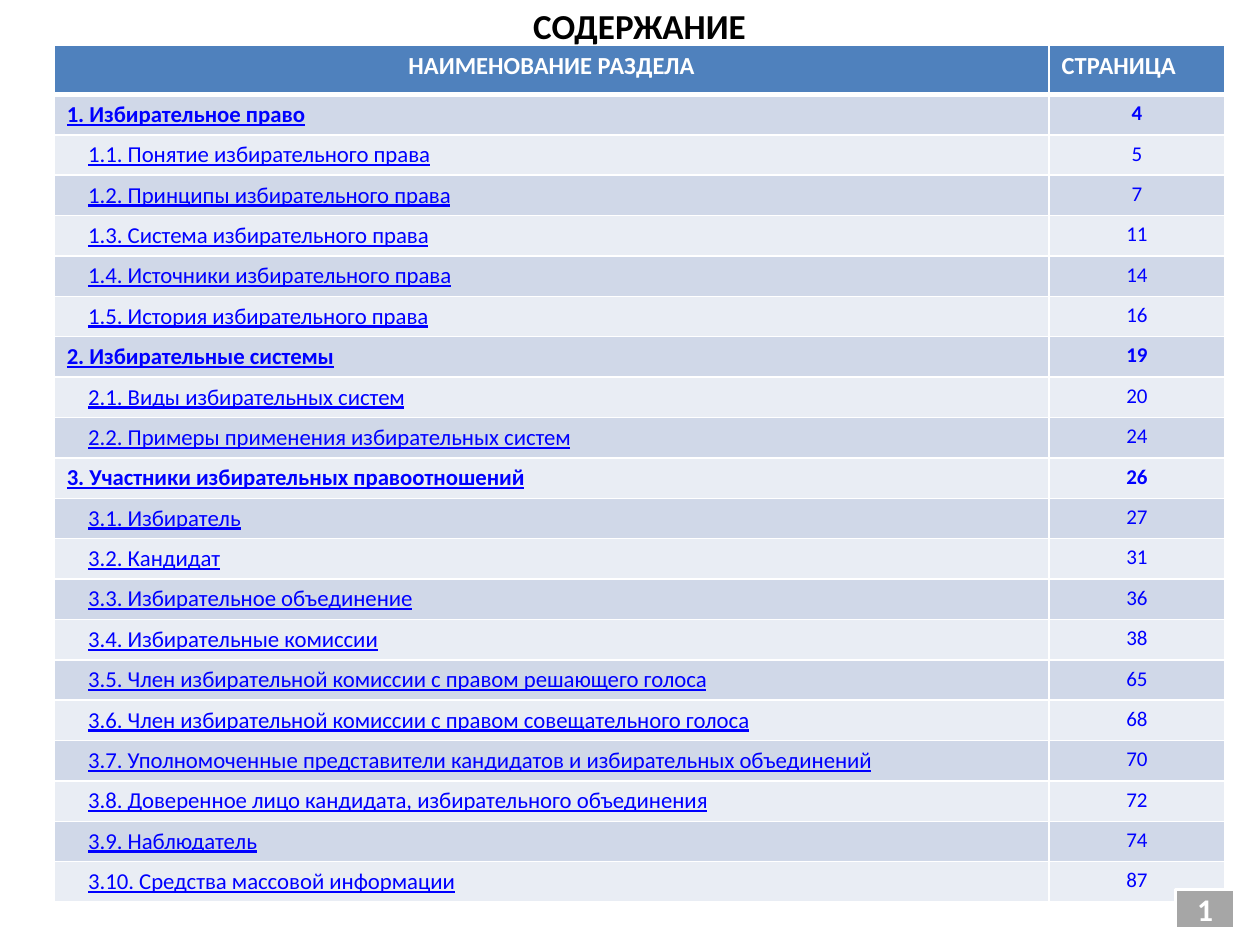
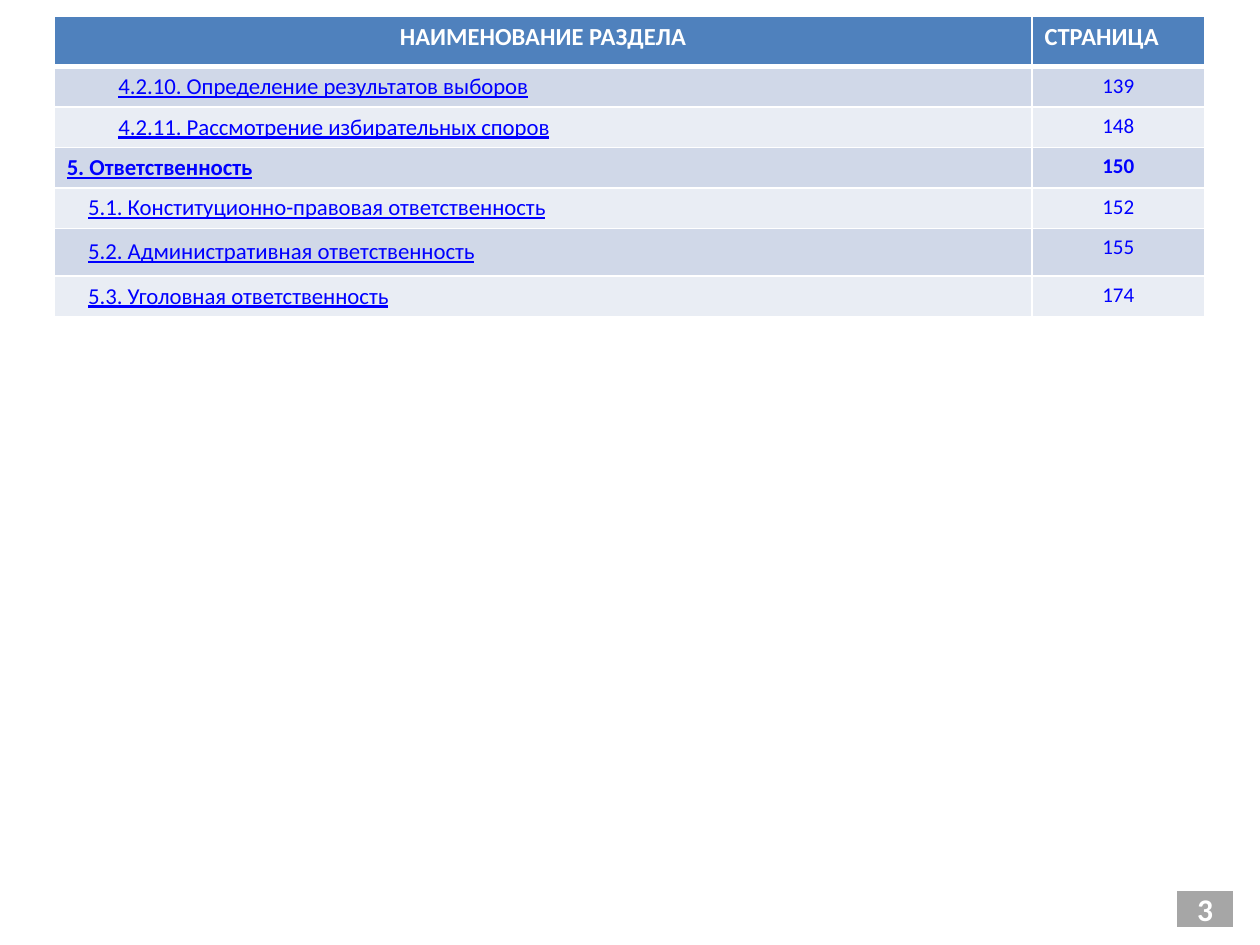
import dataclasses

import pptx
import pptx.dml.color
import pptx.enum.shapes
import pptx.enum.text
import pptx.oxml.ns
import pptx.util
from lxml import etree

Inches = pptx.util.Inches
Pt = pptx.util.Pt
Align = pptx.enum.text.PP_ALIGN
Anchor = pptx.enum.text.MSO_ANCHOR


@dataclasses.dataclass(frozen=True)
class Theme:
    """Colours, type sizes and measures shared by the slides."""
    font: str = "Calibri"
    black: str = "000000"
    white: str = "FFFFFF"
    header: str = "4F81BD"
    bands: tuple = ("D0D8E8", "E9EDF4")
    link: str = "0000FF"
    badge: str = "A6A6A6"
    title_size: float = 20
    badge_size: float = 18
    header_size: float = 14
    section_size: float = 13
    number_size: float = 12
    rule: float = 1
    header_rule: float = 3
    cell_margin: float = 0.1
    indents: tuple = (0, 0.17, 0.41)
    row_height: float = 0.32
    name_share: float = 0.85


THEME = Theme()
WIDTH, HEIGHT = 10, 7.5
LEFT = 0.43
TITLE_BOX = (LEFT, 0.05, 9.29, 0.31)
BADGE_BOX = (9.33, 7.06, 0.47, 0.31)
HEADINGS = ("НАИМЕНОВАНИЕ РАЗДЕЛА", "СТРАНИЦА")

FIRST_SECTIONS = (
    ("1. Избирательное право", 4),
    ("1.1. Понятие избирательного права", 5),
    ("1.2. Принципы избирательного права", 7),
    ("1.3. Система избирательного права", 11),
    ("1.4. Источники избирательного права", 14),
    ("1.5. История избирательного права", 16),
    ("2. Избирательные системы", 19),
    ("2.1. Виды избирательных систем", 20),
    ("2.2. Примеры применения избирательных систем", 24),
    ("3. Участники избирательных правоотношений", 26),
    ("3.1. Избиратель", 27),
    ("3.2. Кандидат", 31),
    ("3.3. Избирательное объединение", 36),
    ("3.4. Избирательные комиссии", 38),
    ("3.5. Член избирательной комиссии с правом решающего голоса", 65),
    ("3.6. Член избирательной комиссии с правом совещательного голоса", 68),
    ("3.7. Уполномоченные представители кандидатов и избирательных объединений", 70),
    ("3.8. Доверенное лицо кандидата, избирательного объединения", 72),
    ("3.9. Наблюдатель", 74),
    ("3.10. Средства массовой информации", 87),
)
LAST_SECTIONS = (
    ("4.2.10. Определение результатов выборов", 139),
    ("4.2.11. Рассмотрение избирательных споров", 148),
    ("5. Ответственность", 150),
    ("5.1. Конституционно-правовая ответственность", 152),
    ("5.2. Административная ответственность", 155),
    ("5.3. Уголовная ответственность", 174),
)


def colour(value):
    """Turn a hex string into a colour."""
    return pptx.dml.color.RGBColor.from_string(value)


def write(frame, text, size, ink, bold=True, underline=False, align=Align.CENTER):
    """Put one formatted line into a text frame."""
    frame.text = text
    para = frame.paragraphs[0]
    para.alignment = align
    font = para.runs[0].font
    font.name, font.size = THEME.font, Pt(size)
    font.bold, font.underline = bold, underline
    font.color.rgb = colour(ink)


def clear_margins(frame):
    """Remove the inner margins and centre the text vertically."""
    frame.margin_left = frame.margin_right = frame.margin_top = frame.margin_bottom = 0
    frame.vertical_anchor = Anchor.MIDDLE


def style_cell(cell, fill, top=THEME.rule, bottom=THEME.rule):
    """Give a cell white borders and a solid fill."""
    properties = cell._tc.get_or_add_tcPr()
    for side, width in (("L", THEME.rule), ("R", THEME.rule), ("T", top), ("B", bottom)):
        line = etree.SubElement(properties, pptx.oxml.ns.qn("a:ln" + side), w=str(int(Pt(width))))
        solid = etree.SubElement(line, pptx.oxml.ns.qn("a:solidFill"))
        etree.SubElement(solid, pptx.oxml.ns.qn("a:srgbClr"), val=THEME.white)
    cell.fill.solid()
    cell.fill.fore_color.rgb = colour(fill)


def add_title(page, text, box):
    """Place and format the title placeholder."""
    title = page.shapes.title
    title.left, title.top, title.width, title.height = map(Inches, box)
    clear_margins(title.text_frame)
    write(title.text_frame, text, THEME.title_size, THEME.black)


def add_contents(page, sections, box, header_height, tall_rows):
    """Draw the contents table; the numbering sets each section's indent."""
    left, top, width = box
    heights = [header_height] + [tall_rows.get(name, THEME.row_height) for name, _ in sections]
    frame = page.shapes.add_table(len(heights), 2, *map(Inches, (left, top, width, sum(heights))))
    table = frame.table
    table.first_row = table.horz_banding = False
    for column, share in zip(table.columns, (THEME.name_share, 1 - THEME.name_share)):
        column.width = Inches(width * share)
    for row, height in zip(table.rows, heights):
        row.height = Inches(height)
    for column, (heading, align) in enumerate(zip(HEADINGS, (Align.CENTER, Align.LEFT))):
        cell = table.cell(0, column)
        style_cell(cell, THEME.header, bottom=THEME.header_rule)
        write(cell.text_frame, heading, THEME.header_size, THEME.white, align=align)
    for row, (name, number) in enumerate(sections, 1):
        depth = name.split()[0].count(".") - 1
        name_cell, number_cell = table.cell(row, 0), table.cell(row, 1)
        for cell in (name_cell, number_cell):
            style_cell(cell, THEME.bands[(row - 1) % 2],
                       top=THEME.header_rule if row == 1 else THEME.rule)
        name_cell.margin_left = Inches(THEME.cell_margin + THEME.indents[depth])
        name_cell.vertical_anchor = Anchor.MIDDLE
        write(name_cell.text_frame, name, THEME.section_size, THEME.link,
              depth == 0, True, Align.LEFT)
        write(number_cell.text_frame, str(number), THEME.number_size, THEME.link, depth == 0)


def add_badge(page, number, box):
    """Draw the page number on its grey plate."""
    badge = page.shapes.add_shape(pptx.enum.shapes.MSO_SHAPE.RECTANGLE, *map(Inches, box))
    badge.shadow.inherit = False
    badge.fill.solid()
    badge.fill.fore_color.rgb = colour(THEME.badge)
    badge.line.color.rgb = colour(THEME.white)
    badge.line.width = Pt(2)
    clear_margins(badge.text_frame)
    write(badge.text_frame, str(number), THEME.badge_size, THEME.white)


def add_contents_page(deck, number, sections, box, header_height, title=None, tall_rows=None):
    """Build one contents slide, with a title if one is given."""
    page = deck.slides.add_slide(deck.slide_layouts[5 if title else 6])
    if title:
        add_title(page, title, TITLE_BOX)
    add_contents(page, sections, box, header_height, tall_rows or {})
    add_badge(page, number, BADGE_BOX)


def main():
    """Build and save the deck."""
    deck = pptx.Presentation()
    deck.slide_width, deck.slide_height = Inches(WIDTH), Inches(HEIGHT)
    add_contents_page(deck, 1, FIRST_SECTIONS, (LEFT, 0.36, 9.29), 0.39, title="СОДЕРЖАНИЕ")
    add_contents_page(deck, 3, LAST_SECTIONS, (LEFT, 0.13, 9.13), 0.4,
                      tall_rows={"5.2. Административная ответственность": 0.38})
    deck.save("out.pptx")


if __name__ == "__main__":
    main()
